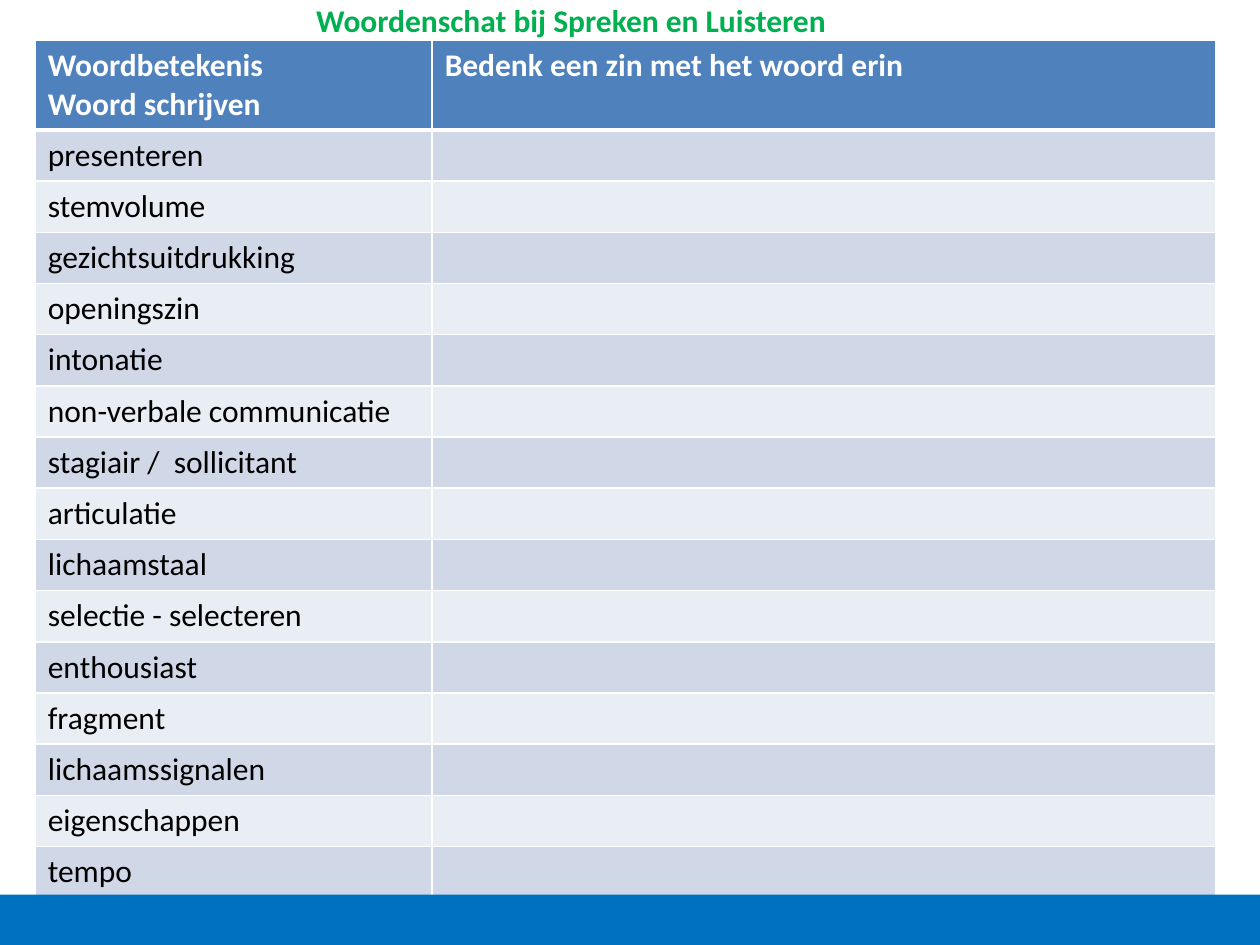
from lxml import etree
from pptx import Presentation
from pptx.dml.color import RGBColor
from pptx.enum import shapes, text
from pptx.oxml import ns
from pptx.util import Inches, Pt

FONT = "Calibri"
WHITE = RGBColor(0xFF, 0xFF, 0xFF)
BLACK = RGBColor(0x00, 0x00, 0x00)
GREEN = RGBColor(0x00, 0xB0, 0x50)
HEADER_BLUE = RGBColor(0x4F, 0x81, 0xBD)
BANDS = (RGBColor(0xD0, 0xD8, 0xE8), RGBColor(0xE9, 0xED, 0xF4))
FOOTER_BLUE = RGBColor(0x00, 0x70, 0xC0)

HEADINGS = (
    ("Woordbetekenis", "Woord schrijven"),
    ("Bedenk een zin met het woord erin",),
)
WORDS = (
    "presenteren", "stemvolume", "gezichtsuitdrukking", "openingszin",
    "intonatie", "non-verbale communicatie", "stagiair /  sollicitant",
    "articulatie", "lichaamstaal", "selectie - selecteren", "enthousiast",
    "fragment", "lichaamssignalen", "eigenschappen", "tempo",
)


def write_lines(frame, lines, color, bold):
    """Write each line as a left-aligned paragraph with one run."""
    for index, line in enumerate(lines):
        paragraph = frame.add_paragraph() if index else frame.paragraphs[0]
        paragraph.alignment = text.PP_ALIGN.LEFT
        run = paragraph.add_run()
        run.text = line
        run.font.name = FONT
        run.font.size = Pt(18)
        run.font.bold = bold
        run.font.color.rgb = color


def add_title(slide, left, top, width, height):
    """Place and format the title placeholder in the given box."""
    title = slide.shapes.title
    title.left, title.top, title.width, title.height = left, top, width, height
    frame = title.text_frame
    frame.auto_size = text.MSO_AUTO_SIZE.NONE
    frame.vertical_anchor = text.MSO_ANCHOR.TOP
    write_lines(frame, ["Woordenschat bij Spreken en Luisteren"], GREEN, True)


def format_cell(cell, fill, borders):
    """Give a cell its white borders, in points by side, and its fill."""
    properties = cell._tc.get_or_add_tcPr()
    for side, points in borders.items():
        line = etree.SubElement(properties, ns.qn(f"a:ln{side}"), w=str(Pt(points)))
        solid = etree.SubElement(line, ns.qn("a:solidFill"))
        etree.SubElement(solid, ns.qn("a:srgbClr"), val=str(WHITE))
    cell.fill.solid()
    cell.fill.fore_color.rgb = fill


def add_word_table(slide, left, top, width, height):
    """Add the vocabulary table with a header and banded word rows."""
    table = slide.shapes.add_table(
        len(WORDS) + 1, len(HEADINGS), left, top, width, height
    ).table
    first_width, header_height = Inches(3.15), Inches(0.68)
    table.columns[0].width = first_width
    table.columns[1].width = width - first_width
    for row in table.rows:
        row.height = (height - header_height) // len(WORDS)
    table.rows[0].height = header_height

    for column, lines in enumerate(HEADINGS):
        cell = table.cell(0, column)
        write_lines(cell.text_frame, lines, WHITE, True)
        format_cell(cell, HEADER_BLUE, {"L": 1, "R": 1, "T": 1, "B": 3})
    for index, word in enumerate(WORDS):
        cells = table.rows[index + 1].cells
        write_lines(cells[0].text_frame, [word], BLACK, False)
        for cell in cells:
            format_cell(cell, BANDS[index % 2], {"L": 1, "R": 1, "B": 1})


def add_footer_bar(slide, left, top, width, height):
    """Add the plain blue bar in the given box."""
    bar = slide.shapes.add_shape(
        shapes.MSO_SHAPE.RECTANGLE, left, top, width, height
    )
    bar.shadow.inherit = False
    bar.fill.solid()
    bar.fill.fore_color.rgb = FOOTER_BLUE
    bar.line.fill.background()


def main():
    """Build the vocabulary slide and save it."""
    presentation = Presentation()
    presentation.slide_width = Inches(10)
    presentation.slide_height = Inches(7.5)
    slide = presentation.slides.add_slide(
        presentation.slide_layouts.get_by_name("Title Only")
    )
    add_title(slide, Inches(2.41), Inches(-0.04), Inches(5.9), Inches(0.4))
    add_word_table(slide, Inches(0.28), Inches(0.32), Inches(9.37), Inches(6.78))
    add_footer_bar(slide, 0, Inches(7.1), presentation.slide_width, Inches(0.4))
    presentation.save("out.pptx")


if __name__ == "__main__":
    main()
